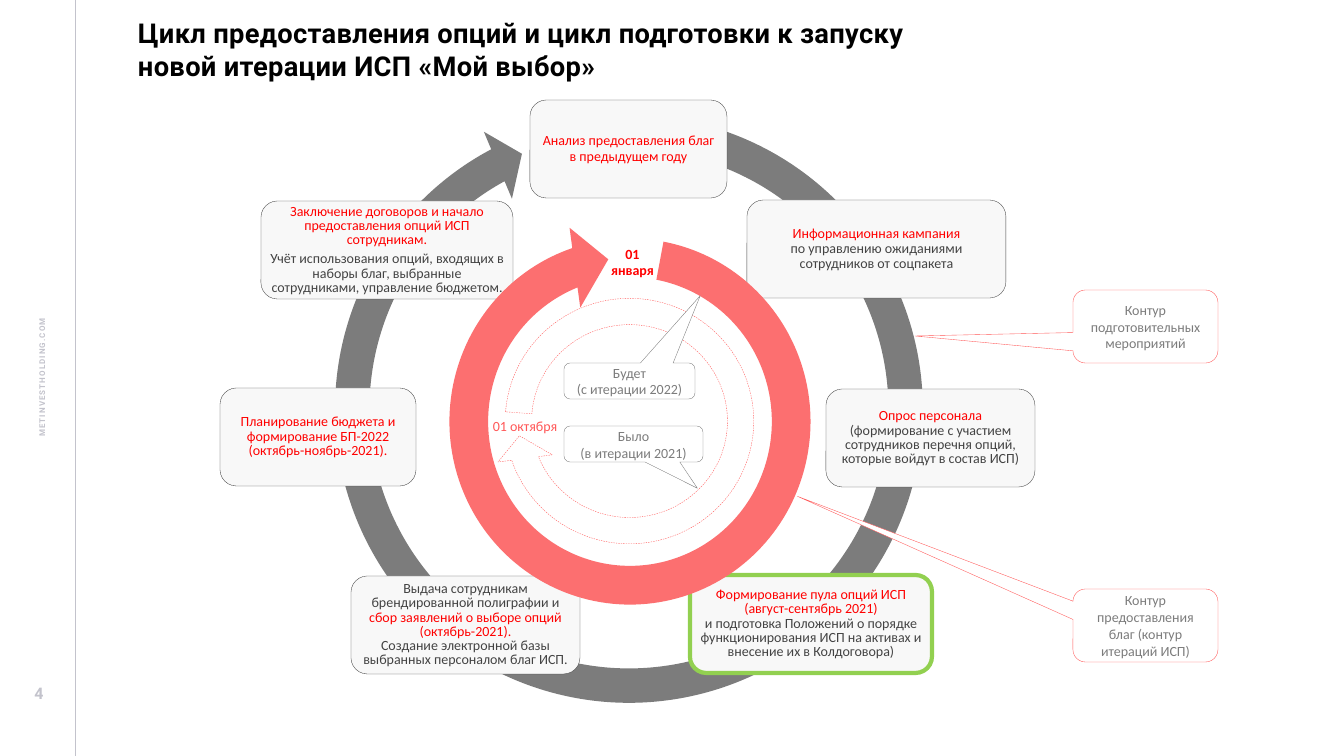
from dataclasses import dataclass
from typing import NamedTuple, Optional

from lxml.etree import SubElement
from pptx import Presentation
from pptx.dml.color import RGBColor
from pptx.enum.dml import MSO_LINE
from pptx.enum.shapes import MSO_CONNECTOR, MSO_SHAPE as SHAPE
from pptx.enum.text import MSO_ANCHOR as ANCHOR, PP_ALIGN as ALIGN
from pptx.oxml.ns import qn
from pptx.util import Emu, Pt

EMU_PER_PX = 914400 / 100.8


@dataclass(frozen=True)
class Theme:
    red: str = "FF0000"
    coral: str = "FC6F70"
    coral_line: str = "FF5757"
    gray: str = "7C7C7C"
    dark: str = "434343"
    pale: str = "C3C3CC"
    card: str = "F8F8F8"
    green: str = "92D050"
    white: str = "FFFFFF"
    black: str = "000000"
    body_font: str = "Calibri"
    head_font: str = "Roboto"
    body: float = 10
    title: float = 19.5
    page: float = 11.4
    site: float = 5.7
    hairline: float = 0.25


T = Theme()


class Box(NamedTuple):
    x: int
    y: int
    w: int
    h: int


class Run(NamedTuple):
    text: str
    color: str


Paragraphs = list[list[Run]]


class Card(NamedTuple):
    x: int
    y: int
    w: int
    text: Paragraphs
    spacing: float = 0.85
    after: float = 0
    line: str = T.dark
    width: float = T.hairline


class CycleArrow(NamedTuple):
    box: Box
    adjustments: tuple[float, ...]
    rotation: int = 0
    fill: Optional[str] = None
    line: Optional[str] = None


class Callout(NamedTuple):
    box: Box
    lines: list[str]
    tip: tuple[float, float]
    line: str
    fill: Optional[str] = T.white


def px(n: int) -> Emu:
    return Emu(round(n * EMU_PER_PX))


def rgb(color: str) -> RGBColor:
    return RGBColor.from_string(color)


def plain(color: str, *lines: str) -> Paragraphs:
    """One paragraph per line, all in one colour."""
    return [[Run(line, color)] for line in lines]


def write(sp, paragraphs: Paragraphs, *, size: float = T.body, font: str = T.body_font,
          bold: bool = False, align=ALIGN.CENTER, anchor=ANCHOR.MIDDLE, spacing: float = 1,
          after: float = 0, tracking: int = 0, inset: Optional[int] = None) -> None:
    tf = sp.text_frame
    tf.word_wrap = True
    tf.vertical_anchor = anchor
    if inset is not None:
        tf.margin_left = tf.margin_top = tf.margin_right = tf.margin_bottom = px(inset)
    for i, runs in enumerate(paragraphs):
        p = tf.add_paragraph() if i else tf.paragraphs[0]
        p.alignment, p.line_spacing, p.space_after = align, spacing, Pt(after)
        for text, color in runs:
            r = p.add_run()
            r.text = text
            r.font.size, r.font.name, r.font.bold = Pt(size), font, bold
            r.font.color.rgb = rgb(color)
            if tracking:
                r.font._element.set("spc", str(tracking))


def add_shape(s, kind, box: Box, *, fill: Optional[str] = None, line: Optional[str] = None,
              width: float = T.hairline, adjustments: tuple[float, ...] = ()):
    sp = s.shapes.add_shape(kind, *map(px, box))
    sp.shadow.inherit = False
    if fill:
        sp.fill.solid()
        sp.fill.fore_color.rgb = rgb(fill)
    else:
        sp.fill.background()
    if line:
        sp.line.color.rgb = rgb(line)
        sp.line.width = Pt(width)
    else:
        sp.line.fill.background()
    for i, value in enumerate(adjustments):
        sp.adjustments[i] = value
    return sp


def add_label(s, box: Box, paragraphs: Paragraphs, *, rotation: int = 0, **style) -> None:
    sp = s.shapes.add_textbox(*map(px, box))
    sp.rotation = rotation
    write(sp, paragraphs, **style)


def add_card(s, card: Card) -> None:
    sp = add_shape(s, SHAPE.ROUNDED_RECTANGLE, Box(card.x, card.y, card.w, CARD_H),
                   fill=T.card, line=card.line, width=card.width)
    write(sp, card.text, spacing=card.spacing, after=card.after, inset=4)


def add_cycle_arrow(s, arrow: CycleArrow) -> None:
    sp = add_shape(s, SHAPE.CIRCULAR_ARROW, arrow.box, fill=arrow.fill, line=arrow.line,
                   adjustments=arrow.adjustments)
    sp.rotation = arrow.rotation
    if arrow.line:
        sp.line.dash_style = MSO_LINE.DASH


def add_callout(s, callout: Callout) -> None:
    sp = add_shape(s, SHAPE.ROUNDED_RECTANGULAR_CALLOUT, callout.box, fill=callout.fill,
                   line=callout.line, adjustments=(*callout.tip, 0.17))
    write(sp, plain(T.gray, *callout.lines))


def add_sidebar(s) -> None:
    add_label(s, Box(-262, 364, 603, 27), plain(T.pale, "METINVESTHOLDING.COM"), rotation=270,
              size=T.site, font=T.head_font, bold=True, spacing=1.5, tracking=80, inset=0)
    rule = s.shapes.add_connector(MSO_CONNECTOR.STRAIGHT, px(75), px(756), px(75), px(0))
    rule.line.color.rgb = rgb(T.pale)
    rule.line.width = Pt(0.5)
    SubElement(rule._element.spPr, qn("a:effectLst"))
    add_label(s, Box(0, 679, 78, 29), plain(T.pale, "4"), size=T.page, font=T.head_font,
              bold=True, anchor=ANCHOR.TOP)


CARD_H = 98
CARDS = [
    Card(530, 100, 197, plain(T.red, "Анализ предоставления благ в предыдущем году"), 0.9),
    Card(747, 200, 259, [
        [Run("Информационная кампания", T.red)],
        [Run("по управлению ожиданиями сотрудников от соцпакета", T.dark)]], 0.9),
    Card(826, 389, 209, [[
        Run("Опрос персонала ", T.red),
        Run("(формирование с участием сотрудников перечня опций, которые войдут в состав ИСП)",
            T.dark)]], after=3.5),
    Card(690, 575, 242, [
        *plain(T.red, "Формирование пула опций ИСП", "(август-сентябрь 2021)"),
        [Run("и подготовка Положений о порядке функционирования ИСП на активах "
             "и внесение их в Колдоговора)", T.dark)]], line=T.green, width=3),
    Card(351, 576, 229, [
        [Run("Выдача сотрудникам брендированной полиграфии и", T.dark)],
        *plain(T.red, "сбор заявлений о выборе опций", "(октябрь-2021)."),
        [Run("Создание электронной базы выбранных персоналом благ ИСП.", T.dark)]]),
    Card(220, 388, 196, plain(T.red, "Планирование бюджета и формирование БП-2022",
                              "(октябрь-ноябрь-2021).")),
    Card(261, 201, 252, [
        [Run("Заключение договоров и начало предоставления опций ИСП сотрудникам.", T.red)],
        [Run("Учёт использования опций, входящих в наборы благ, выбранные сотрудниками, "
             "управление бюджетом.", T.dark)]], after=3.5),
]
PREPARATION = CycleArrow(Box(316, 96, 626, 626), (0.055, 3.31, 145.04, 169.57, 0.058),
                         fill=T.gray)
PROVISION = CycleArrow(Box(426, 220, 408, 403), (0.096, 7.25, 204.18, 6.33, 0.1), 270,
                       fill=T.coral)
PREVIOUS = CycleArrow(Box(491, 284, 277, 274), (0.096, 7.25, 204.18, 2.56, 0.1), 180,
                      line=T.coral_line)
CALLOUTS = [
    Callout(Box(1073, 290, 145, 73), ["Контур подготовительных мероприятий"],
            (-1.59, 0.13), T.coral_line, None),
    Callout(Box(1073, 589, 145, 73), ["Контур предоставления благ (контур итераций ИСП)"],
            (-2.4, -1.77), T.coral_line),
    Callout(Box(564, 363, 131, 36), ["Будет", "(с итерации 2022)"], (0.54, -2.37), T.gray),
    Callout(Box(564, 426, 139, 36), ["Было", "(в итерации 2021)"], (0.46, 1.23), T.gray),
]


def main() -> None:
    prs = Presentation()
    prs.slide_width, prs.slide_height = px(1344), px(756)
    s = prs.slides.add_slide(prs.slide_layouts[6])
    add_sidebar(s)
    add_label(s, Box(138, 16, 1171, 77),
              plain(T.black, "Цикл предоставления опций и цикл подготовки к запуску",
                    "новой итерации ИСП «Мой выбор»"), size=T.title, font=T.head_font,
              bold=True, align=ALIGN.LEFT, anchor=ANCHOR.TOP, tracking=20, inset=0)
    add_cycle_arrow(s, PREPARATION)
    for card in CARDS:
        add_card(s, card)
    add_cycle_arrow(s, PROVISION)
    add_cycle_arrow(s, PREVIOUS)
    add_label(s, Box(473, 407, 104, 38), plain(T.coral_line, "01 октября"))
    add_label(s, Box(595, 243, 75, 38), plain(T.red, "01 января"), bold=True)
    for callout in CALLOUTS:
        add_callout(s, callout)
    prs.save("out.pptx")


if __name__ == "__main__":
    main()
